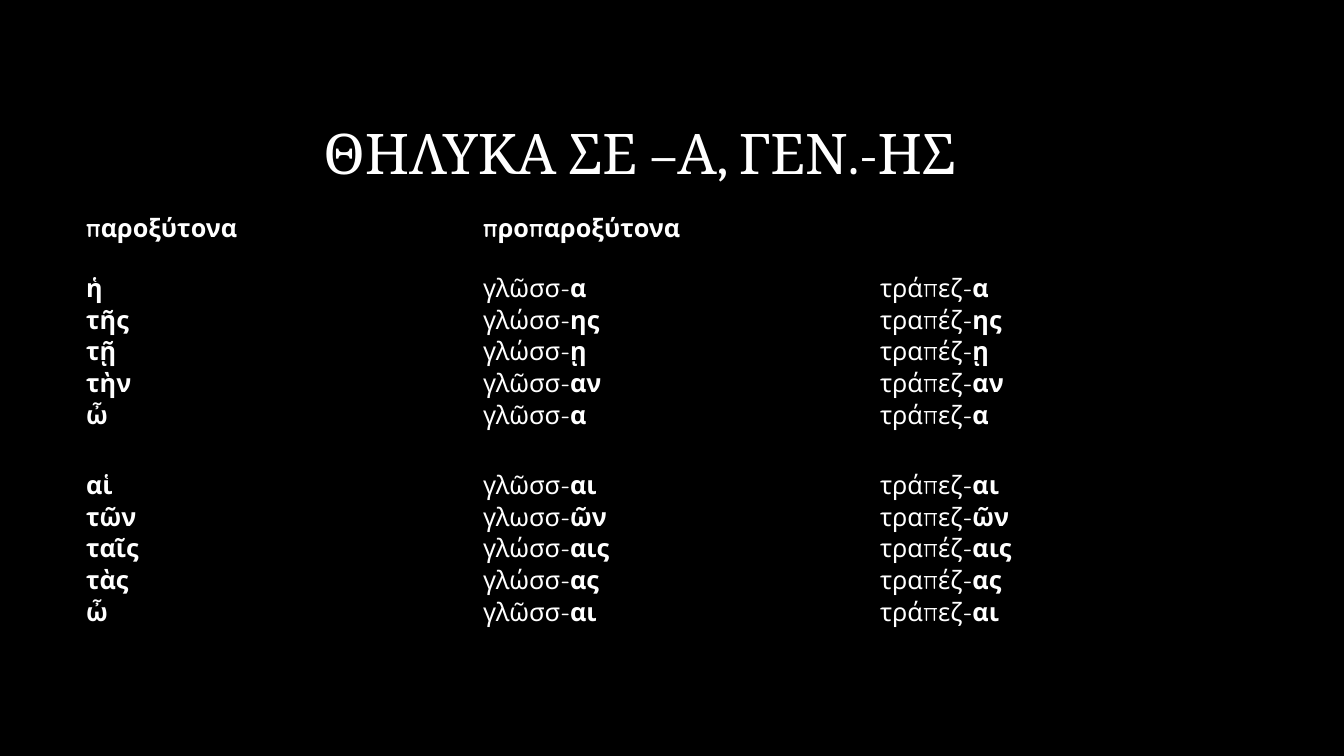
"""Builds a slide that shows the cases of Greek feminine nouns."""
import pptx
import pptx.dml.color
import pptx.enum.text
import pptx.oxml
import pptx.oxml.ns
import pptx.util
from dataclasses import dataclass

SCALE = 12192000 / 1344


@dataclass(frozen=True)
class Theme:
    back: str = "000000"
    ink: str = "FFFFFF"
    head_font: str = "Cambria"
    body_font: str = "Quicksand"
    head_size: int = 40
    body_size: int = 18


THEME = Theme()
HEADS = ["παροξύτονα", "προπαροξύτονα"]
STEMS = [["γλῶσσ-", "γλώσσ-", "γλωσσ-"], ["τράπεζ-", "τραπέζ-", "τραπεζ-"]]
NUMBERS = [
    (["ἡ", "τῆς", "τῇ", "τὴν", "ὦ"], ["α", "ης", "ῃ", "αν", "α"], [0, 1, 1, 0, 0]),
    (["αἱ", "τῶν", "ταῖς", "τὰς", "ὦ"], ["αι", "ῶν", "αις", "ας", "αι"], [0, 2, 1, 1, 0]),
]


def px(count):
    return pptx.util.Emu(round(count * SCALE))


def tint(code):
    return pptx.dml.color.RGBColor.from_string(code)


def style(run, font, size, bold=False):
    run.font.name = font
    run.font.size = pptx.util.Pt(size)
    run.font.bold = bold
    run.font.color.rgb = tint(THEME.ink)


def add_title(slide, text, left, top, width, height):
    frame = slide.shapes.add_textbox(px(left), px(top), px(width), px(height)).text_frame
    frame.word_wrap = True
    frame.vertical_anchor = pptx.enum.text.MSO_ANCHOR.MIDDLE
    frame.text = text
    line = frame.paragraphs[0]
    line.alignment = pptx.enum.text.PP_ALIGN.RIGHT
    line.line_spacing = 0.9
    style(line.runs[0], THEME.head_font, THEME.head_size)


def clear_cell(cell):
    props = cell._tc.get_or_add_tcPr()
    for side in ("lnL", "lnR", "lnT", "lnB"):
        edge = pptx.oxml.parse_xml(
            f'<a:{side} {pptx.oxml.ns.nsdecls("a")} w="0"><a:noFill/></a:{side}>')
        props.append(edge)
    cell.fill.solid()
    cell.fill.fore_color.rgb = tint(THEME.back)
    cell.vertical_anchor = pptx.enum.text.MSO_ANCHOR.MIDDLE


def fill_cell(cell, lines):
    para = cell.text_frame.paragraphs[0]
    for index, parts in enumerate(lines):
        if index:
            para.add_line_break()
        for text, bold in parts:
            run = para.add_run()
            run.text = text
            style(run, THEME.body_font, THEME.body_size, bold)


def add_grid(slide, left, top, widths, heights):
    frame = slide.shapes.add_table(len(heights), len(widths), px(left), px(top),
                                   px(sum(widths)), px(sum(heights)))
    table = frame.table
    table.first_row = False
    table.horz_banding = False
    for column, width in zip(table.columns, widths):
        column.width = px(width)
    for row, height in zip(table.rows, heights):
        row.height = px(height)
    for cell in table.iter_cells():
        clear_cell(cell)
    return table


def fill_grid(table):
    table.cell(0, 1).merge(table.cell(0, 2))
    for col, head in enumerate(HEADS):
        fill_cell(table.cell(0, col), [[(head, True)]])
    for row, (words, ends, forms) in enumerate(NUMBERS, 1):
        fill_cell(table.cell(row, 0), [[(word, True)] for word in words])
        for col, stems in enumerate(STEMS, 1):
            lines = [[(stems[form], False), (end, True)] for form, end in zip(forms, ends)]
            fill_cell(table.cell(row, col), lines)


def main():
    deck = pptx.Presentation()
    deck.slide_width, deck.slide_height = px(1344), px(756)
    slide = deck.slides.add_slide(deck.slide_layouts[6])
    slide.background.fill.solid()
    slide.background.fill.fore_color.rgb = tint(THEME.back)
    add_title(slide, "ΘΗΛΥΚΑ ΣΕ –Α, ΓΕΝ.-ΗΣ", 187, 85, 779, 142)
    fill_grid(add_grid(slide, 76, 204, [397] * 3, [49, 197, 197]))
    deck.save("out.pptx")


if __name__ == "__main__":
    main()
